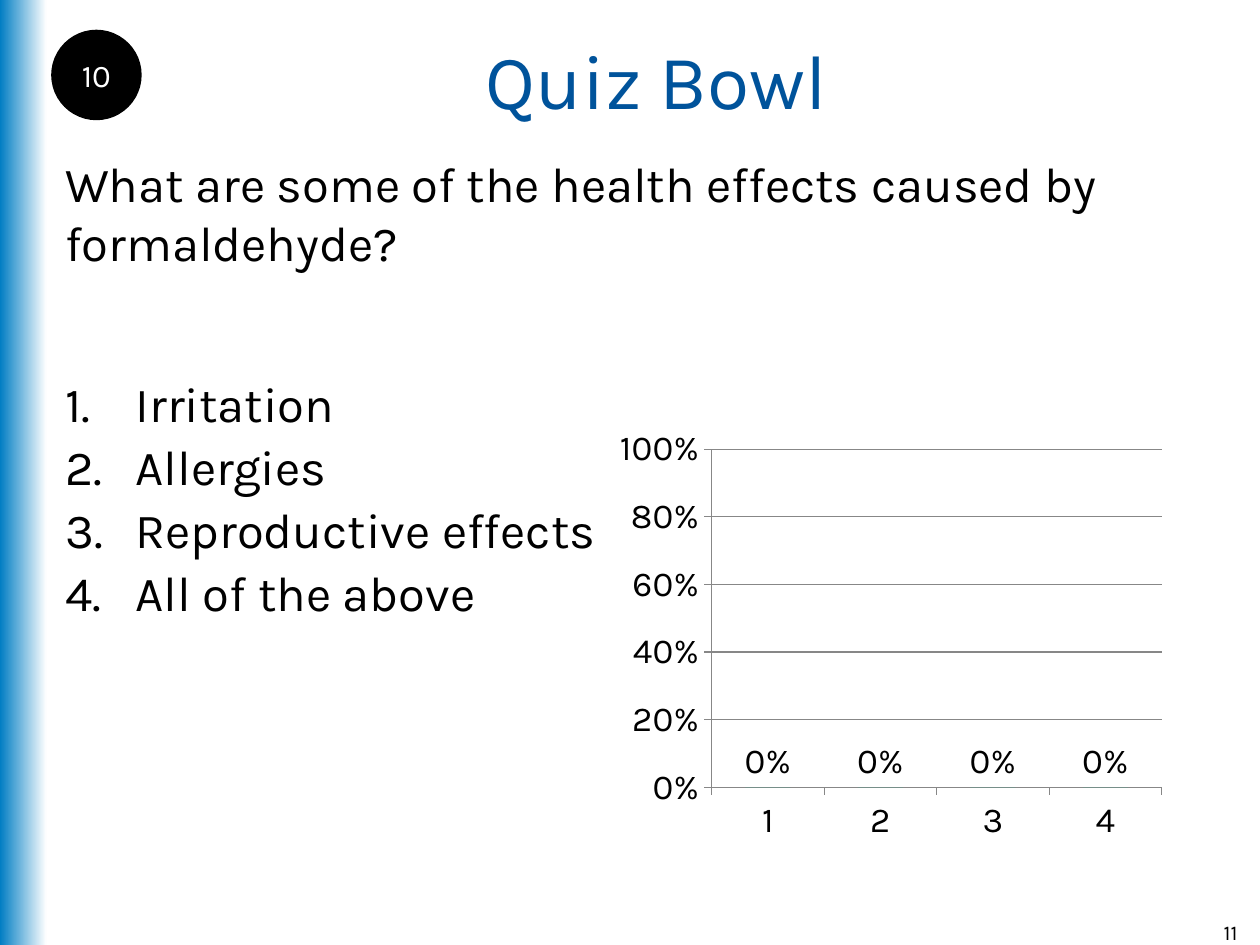
import pptx
import pptx.chart.data
import pptx.dml.color
import pptx.enum.chart
import pptx.enum.shapes
import pptx.enum.text
import pptx.oxml
import pptx.oxml.ns
import pptx.util

Inches = pptx.util.Inches
Pt = pptx.util.Pt
RGBColor = pptx.dml.color.RGBColor
ALIGN = pptx.enum.text.PP_ALIGN
ANCHOR = pptx.enum.text.MSO_ANCHOR
SHAPE = pptx.enum.shapes.MSO_SHAPE

BLACK = RGBColor(0x00, 0x00, 0x00)
WHITE = RGBColor(0xFF, 0xFF, 0xFF)
TITLE_BLUE = RGBColor(0x00, 0x53, 0x9B)
BAND_BLUE = RGBColor(0x00, 0x7D, 0xC3)
BAR_GREEN = RGBColor(0x00, 0xCC, 0x99)
AXIS_GRAY = RGBColor(0x87, 0x87, 0x87)
FONT_NAME = "Karla"


def set_attributes(target, values):
    for name, value in values.items():
        setattr(target, name, value)


def style_font(font, size, color):
    set_attributes(font, {"name": FONT_NAME, "size": Pt(size), "bold": False})
    font.color.rgb = color


def add_text(slide, box, lines, size, color=BLACK, align=ALIGN.LEFT,
             anchor=ANCHOR.TOP, numbered=False):
    frame = slide.shapes.add_textbox(*map(Inches, box)).text_frame
    set_attributes(frame, {"word_wrap": True, "vertical_anchor": anchor})
    for index, line in enumerate(lines):
        paragraph = frame.paragraphs[0] if index == 0 else frame.add_paragraph()
        run = paragraph.add_run()
        run.text = line
        if numbered:
            number_paragraph(paragraph)
        paragraph.alignment = align
        if index:
            paragraph.space_before = Pt(0.2 * size)
        style_font(run.font, size, color)


def number_paragraph(paragraph):
    properties = paragraph._p.get_or_add_pPr()
    properties.set("marL", str(Inches(0.56)))
    properties.set("indent", str(Inches(-0.56)))
    properties.append(pptx.oxml.parse_xml(
        f'<a:buAutoNum {pptx.oxml.ns.nsdecls("a")} type="arabicPeriod"/>'))
    paragraph.line_spacing = 0.9


def add_side_band(slide, box):
    band = slide.shapes.add_shape(SHAPE.RECTANGLE, *map(Inches, box))
    band.shadow.inherit = False
    band.line.fill.background()
    band.fill.gradient()
    band.fill.gradient_angle = 0
    for stop, position, color in zip(band.fill.gradient_stops, (0, 1), (BAND_BLUE, WHITE)):
        stop.position = position
        stop.color.rgb = color


def add_response_chart(slide, box):
    data = pptx.chart.data.CategoryChartData(number_format="0%")
    data.categories = ["1", "2", "3", "4"]
    data.add_series("Series 1", [0] * 4)
    chart = slide.shapes.add_chart(
        pptx.enum.chart.XL_CHART_TYPE.COLUMN_CLUSTERED, *map(Inches, box), data).chart
    set_attributes(chart, {"has_legend": False, "has_title": False})
    style_font(chart.font, 20, BLACK)

    value_axis = chart.value_axis
    set_attributes(value_axis, {"minimum_scale": 0, "maximum_scale": 1,
                                "major_unit": 0.2, "has_major_gridlines": True})
    set_attributes(value_axis.tick_labels,
                   {"number_format": "0%", "number_format_is_linked": False})
    for axis in (chart.category_axis, value_axis):
        axis.major_tick_mark = pptx.enum.chart.XL_TICK_MARK.OUTSIDE
    for line in (chart.category_axis.format.line, value_axis.format.line,
                 value_axis.major_gridlines.format.line):
        line.color.rgb = AXIS_GRAY
        line.width = Pt(0.75)

    plot = chart.plots[0]
    set_attributes(plot, {"gap_width": 150, "vary_by_categories": False})
    series = plot.series[0]
    series.format.fill.solid()
    series.format.fill.fore_color.rgb = BAR_GREEN
    labels = series.data_labels
    set_attributes(labels, {"show_value": True, "number_format": "0%",
                            "number_format_is_linked": False,
                            "position": pptx.enum.chart.XL_LABEL_POSITION.OUTSIDE_END})
    style_font(labels.font, 20, BLACK)


def add_countdown(slide, box, seconds):
    circle = slide.shapes.add_shape(SHAPE.OVAL, *map(Inches, box))
    circle.shadow.inherit = False
    circle.fill.solid()
    circle.fill.fore_color.rgb = BLACK
    circle.line.color.rgb = BLACK
    circle.line.width = Pt(2)
    frame = circle.text_frame
    set_attributes(frame, {"margin_left": 0, "margin_right": 0, "margin_top": 0,
                           "margin_bottom": 0, "word_wrap": False,
                           "vertical_anchor": ANCHOR.MIDDLE})
    paragraph = frame.paragraphs[0]
    paragraph.alignment = ALIGN.CENTER
    run = paragraph.add_run()
    run.text = seconds
    style_font(run.font, 18, WHITE)


def build_quiz_slide(presentation):
    slide = presentation.slides.add_slide(presentation.slide_layouts[6])
    slide.background.fill.solid()
    slide.background.fill.fore_color.rgb = WHITE
    add_side_band(slide, (0, 0, 0.37, 7.5))
    add_text(slide, (0.42, 0, 9.58, 1.25), ["Quiz Bowl"], 44, TITLE_BLUE,
             ALIGN.CENTER, ANCHOR.MIDDLE)
    add_text(slide, (9.42, 7.25, 0.5, 0.25), ["11"], 12, align=ALIGN.RIGHT)
    add_text(slide, (0.42, 1.17, 9.3, 1.44),
             ["What are some of the health effects caused by formaldehyde?"], 28)
    add_text(slide, (0.42, 2.97, 4.48, 4.17),
             ["Irritation", "Allergies", "Reproductive effects", "All of the above"],
             28, numbered=True)
    add_response_chart(slide, (4.83, 3.33, 4.48, 3.42))
    add_countdown(slide, (0.42, 0.25, 0.69, 0.69), "10")


def main():
    presentation = pptx.Presentation()
    set_attributes(presentation, {"slide_width": Inches(10), "slide_height": Inches(7.5)})
    build_quiz_slide(presentation)
    presentation.save("out.pptx")


if __name__ == "__main__":
    main()
